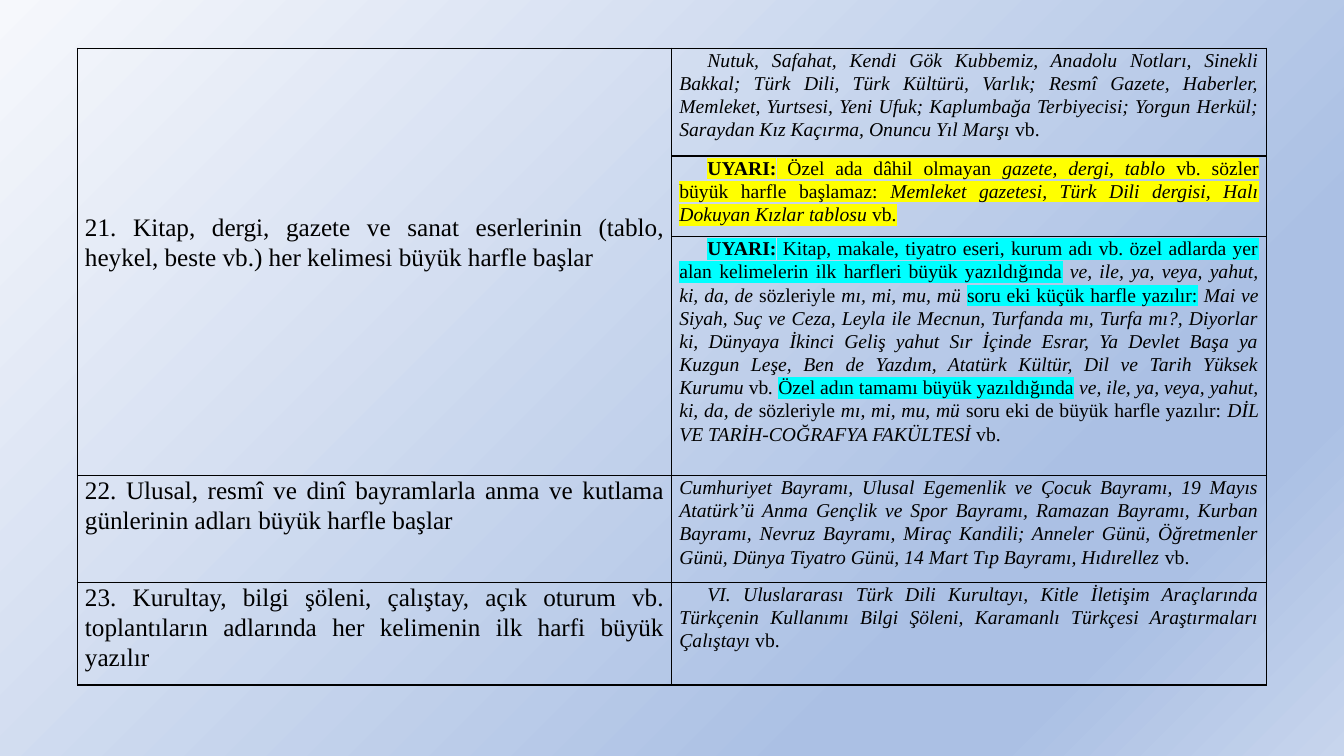
from lxml import etree
from pptx import Presentation, util as u
from pptx.dml.color import RGBColor
from pptx.enum import text
from pptx.oxml.ns import qn

BLACK = RGBColor(0x00, 0x00, 0x00)
YELLOW = RGBColor(0xFF, 0xFF, 0x00)
CYAN = RGBColor(0x00, 0xFF, 0xFF)
PALE = RGBColor(0xF6, 0xF8, 0xFC)
BLUE = RGBColor(0xAB, 0xC0, 0xE4)
MIST = RGBColor(0xC7, 0xD5, 0xED)

STOPS = [(0, PALE), (74, BLUE), (83, BLUE), (100, MIST)]
WIDTHS = [424.6, 424.6]
HEIGHTS = [77, 57.6, 170.6, 76.3, 73.4]

# In the strings, * toggles italics, | the highlight and _ bold.
RULES = {
    0: "21. Kitap, dergi, gazete ve sanat eserlerinin (tablo, heykel, beste vb.) "
       "her kelimesi büyük harfle başlar",
    3: "22. Ulusal, resmî ve dinî bayramlarla anma ve kutlama günlerinin adları "
       "büyük harfle başlar",
    4: "23. Kurultay, bilgi şöleni, çalıştay, açık oturum vb. toplantıların "
       "adlarında her kelimenin ilk harfi büyük yazılır",
}
WORDS = "*ve, ile, ya, veya, yahut, ki, da, de *sözleriyle *mı, mi, mu, mü *"
SAMPLES = [
    ("*Nutuk, Safahat, Kendi Gök Kubbemiz, Anadolu Notları, Sinekli Bakkal; "
     "Türk Dili, Türk Kültürü, Varlık; Resmî Gazete, Haberler, Memleket, "
     "Yurtsesi, Yeni Ufuk; Kaplumbağa Terbiyecisi; Yorgun Herkül; Saraydan Kız "
     "Kaçırma, Onuncu Yıl Marşı* vb.", 20, None),
    ("|_UYARI:_ Özel ada dâhil olmayan *gazete, dergi, tablo* vb. sözler büyük "
     "harfle başlamaz: *Memleket gazetesi, Türk Dili dergisi, Halı Dokuyan "
     "Kızlar tablosu* vb.|", 20, YELLOW),
    ("|_UYARI:_ Kitap, makale, tiyatro eseri, kurum adı vb. özel adlarda yer alan "
     "kelimelerin ilk harfleri büyük yazıldığında| " + WORDS +
     "|soru eki küçük harfle yazılır:| *Mai ve Siyah, Suç ve Ceza, Leyla ile "
     "Mecnun, Turfanda mı, Turfa mı?, Diyorlar ki, Dünyaya İkinci Geliş yahut Sır "
     "İçinde Esrar, Ya Devlet Başa ya Kuzgun Leşe, Ben de Yazdım, Atatürk Kültür, "
     "Dil ve Tarih Yüksek Kurumu *vb*. *|Özel adın tamamı büyük yazıldığında| " +
     WORDS + "soru eki de büyük harfle yazılır: *DİL VE TARİH-COĞRAFYA "
     "FAKÜLTESİ* vb.", 20, CYAN),
    ("*Cumhuriyet Bayramı, Ulusal Egemenlik ve Çocuk Bayramı, 19 Mayıs Atatürk’ü "
     "Anma Gençlik ve Spor Bayramı, Ramazan Bayramı, Kurban Bayramı, Nevruz "
     "Bayramı, Miraç Kandili; Anneler Günü, Öğretmenler Günü, Dünya Tiyatro Günü, "
     "14 Mart Tıp Bayramı, Hıdırellez* vb.", 0, None),
    ("*VI. Uluslararası Türk Dili Kurultayı, Kitle İletişim Araçlarında Türkçenin "
     "Kullanımı Bilgi Şöleni, Karamanlı Türkçesi Araştırmaları Çalıştayı* vb.",
     20, None),
]


def split(line):
    for i, mark in enumerate(line.split("|")):
        for j, slant in enumerate(mark.split("*")):
            for k, part in enumerate(slant.split("_")):
                if part:
                    yield part, i % 2, j % 2, k % 2


def put(para, line, size=14, font="Times New Roman", color=BLACK, mark=None, indent=0):
    para.alignment = text.PP_ALIGN.JUSTIFY
    para.line_spacing = 1.07
    para.space_after = u.Pt(8)
    props = para._p.get_or_add_pPr()
    props.set("marL", "0")
    props.set("indent", str(u.Pt(indent)))
    for part, lit, slant, bold in split(line):
        run = para.add_run()
        run.text = part
        style = run.font
        style.size = u.Pt(size)
        style.italic = bool(slant)
        style.bold = bool(bold)
        style.color.rgb = color
        if lit:
            light = etree.Element(qn("a:highlight"))
            etree.SubElement(light, qn("a:srgbClr"), val=str(mark))
            run._r.rPr.find(qn("a:solidFill")).addnext(light)
        style.name = font


class Page:
    def __init__(self, deck, line=1, inset=5.4):
        self.slide = deck.slides.add_slide(deck.slide_layouts[6])
        self.line = line
        self.inset = inset

    def shade(self, stops, angle):
        fill = self.slide.background.fill
        fill.gradient()
        fill.gradient_angle = 360 - angle
        group = self.slide._element.find(".//" + qn("a:gsLst"))
        for old in list(group):
            group.remove(old)
        for place, color in stops:
            stop = etree.SubElement(group, qn("a:gs"), pos=str(place * 1000))
            etree.SubElement(stop, qn("a:srgbClr"), val=str(color))

    def grid(self, left, top, widths, heights):
        frame = self.slide.shapes.add_table(
            len(heights), len(widths), u.Pt(left), u.Pt(top),
            u.Pt(sum(widths)), u.Pt(sum(heights)))
        table = frame.table
        table.first_row = table.horz_banding = False
        for col, width in zip(table.columns, widths):
            col.width = u.Pt(width)
        for row, height in zip(table.rows, heights):
            row.height = u.Pt(height)
            for cell in row.cells:
                self.frame(cell)
        return table

    def frame(self, cell):
        cell.margin_left = cell.margin_right = u.Pt(self.inset)
        cell.margin_top = cell.margin_bottom = 0
        cell.fill.background()
        props = cell._tc.tcPr
        for i, side in enumerate("LRTB"):
            edge = etree.Element(qn("a:ln" + side), w=str(u.Pt(self.line)))
            fill = etree.SubElement(edge, qn("a:solidFill"))
            etree.SubElement(fill, qn("a:srgbClr"), val=str(BLACK))
            props.insert(i, edge)


def main():
    deck = Presentation()
    deck.slide_width, deck.slide_height = u.Pt(960), u.Pt(540)
    page = Page(deck)
    page.shade(STOPS, 45)
    table = page.grid(55.3, 34.5, WIDTHS, HEIGHTS)
    table.cell(0, 0).merge(table.cell(2, 0))
    table.cell(0, 0).margin_top = u.Pt(117)
    for row, rule in RULES.items():
        put(table.cell(row, 0).text_frame.paragraphs[0], rule, size=18)
    for row, (line, indent, mark) in enumerate(SAMPLES):
        put(table.cell(row, 1).text_frame.paragraphs[0], line, indent=indent, mark=mark)
    deck.save("out.pptx")


if __name__ == "__main__":
    main()
